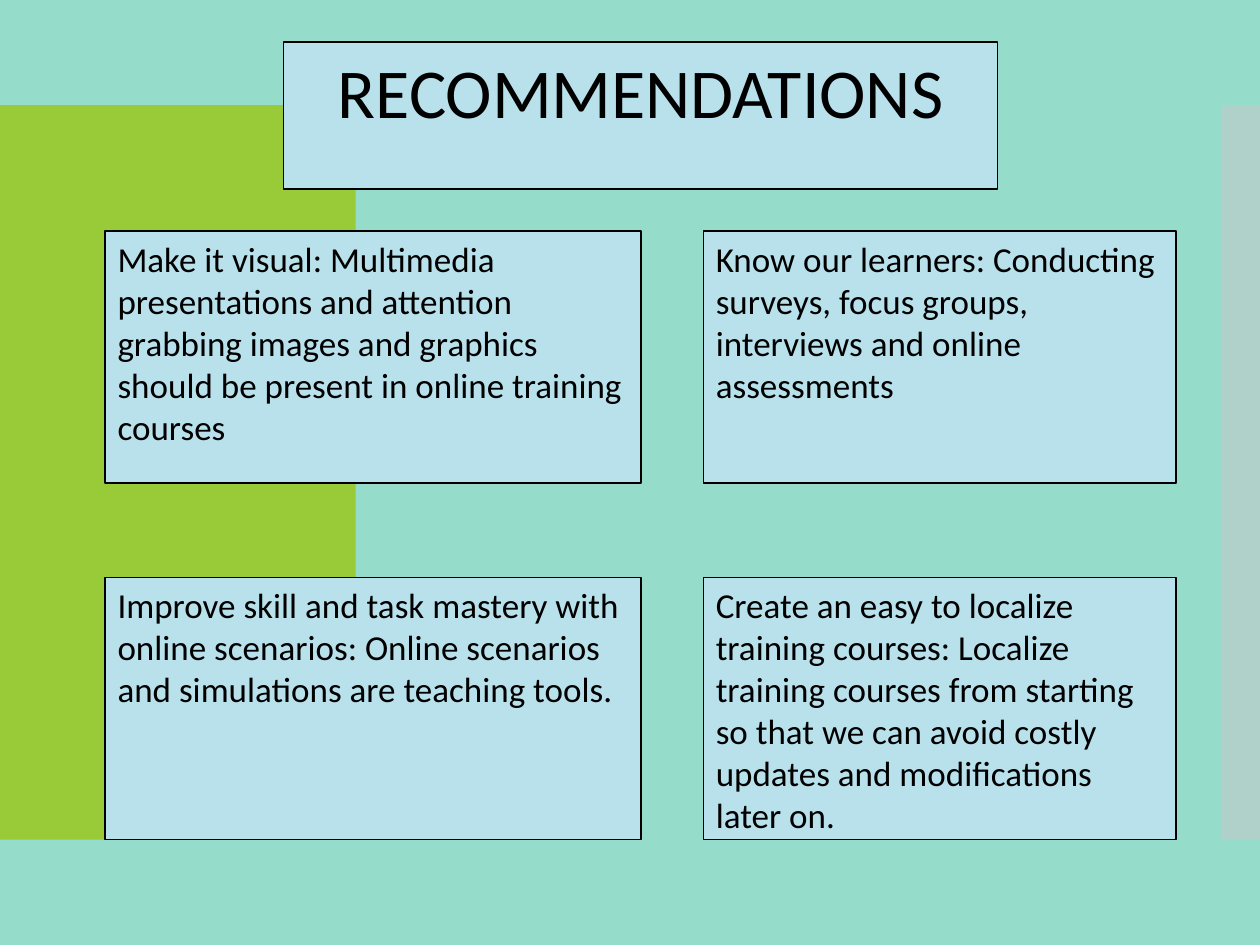
from lxml import etree
from pptx import Presentation
from pptx.dml.color import RGBColor
from pptx.enum.shapes import MSO_SHAPE
from pptx.enum.text import MSO_AUTO_SIZE, PP_ALIGN
from pptx.oxml.ns import qn
from pptx.util import Cm, Pt

RECT = MSO_SHAPE.RECTANGLE
GROW = MSO_AUTO_SIZE.SHAPE_TO_FIT_TEXT
LEFT, CENTER = PP_ALIGN.LEFT, PP_ALIGN.CENTER


def color(fmt, code):
    fmt.solid()
    fmt.fore_color.rgb = RGBColor.from_string(code)


def block(x, y, w, h, code):
    rect = slide.shapes.add_shape(RECT, Cm(x), Cm(y), Cm(w), Cm(h))
    rect.shadow.inherit = False
    color(rect.fill, code)
    rect.line.fill.background()
    return rect


deck = Presentation()
deck.slide_width, deck.slide_height = Cm(25.4), Cm(19.05)
slide = deck.slides.add_slide(deck.slide_layouts[6])
color(slide.background.fill, "96DCCB")

block(0, 2.12, 7.17, 14.81, "99CB38")
strip = block(24.61, 2.12, 0.79, 14.81, "C8C8C8")
tone = strip.fill._xPr.find(qn("a:solidFill"))[0]
etree.SubElement(tone, qn("a:alpha"), val="50000")

cols = [(2.12, 10.8), (14.18, 9.53)]
rows = [(4.66, 5.08), (11.64, 5.29)]
tips = [
    ("Make it visual: Multimedia presentations and attention grabbing images and graphics should be present in online training courses", 4.52),
    ("Know our learners: Conducting surveys, focus groups, interviews and online assessments", 3.68),
    ("Improve skill and task mastery with online scenarios: Online scenarios and simulations are teaching tools.", 3.58),
    ("Create an easy to localize training courses: Localize training courses from starting so that we can avoid costly updates and modifications later on.", 6.15),
]
cells = [(x, y, w, h) for y, h in rows for x, w in cols]
cards = [((5.72, 0.85, 14.39, 2.96), "RECOMMENDATIONS", 1.96, 40, CENTER)]
for cell, (text, high) in zip(cells, tips):
    cards.append((cell, text, high, 20, LEFT))

for cell, *rest in cards:
    panel = block(*cell, "B8E1EC")
    color(panel.line.fill, "000000")
    panel.line.width = Pt(0.85)

for (x, y, w, h), text, high, size, align in cards:
    frame = slide.shapes.add_textbox(Cm(x), Cm(y), Cm(w), Cm(high)).text_frame
    frame.word_wrap = True
    frame.auto_size = GROW
    frame.text = text
    para = frame.paragraphs[0]
    para.alignment = align
    font = para.runs[0].font
    font.name = "Calibri"
    font.size = Pt(size)
    color(font.fill, "000000")

deck.save("out.pptx")
